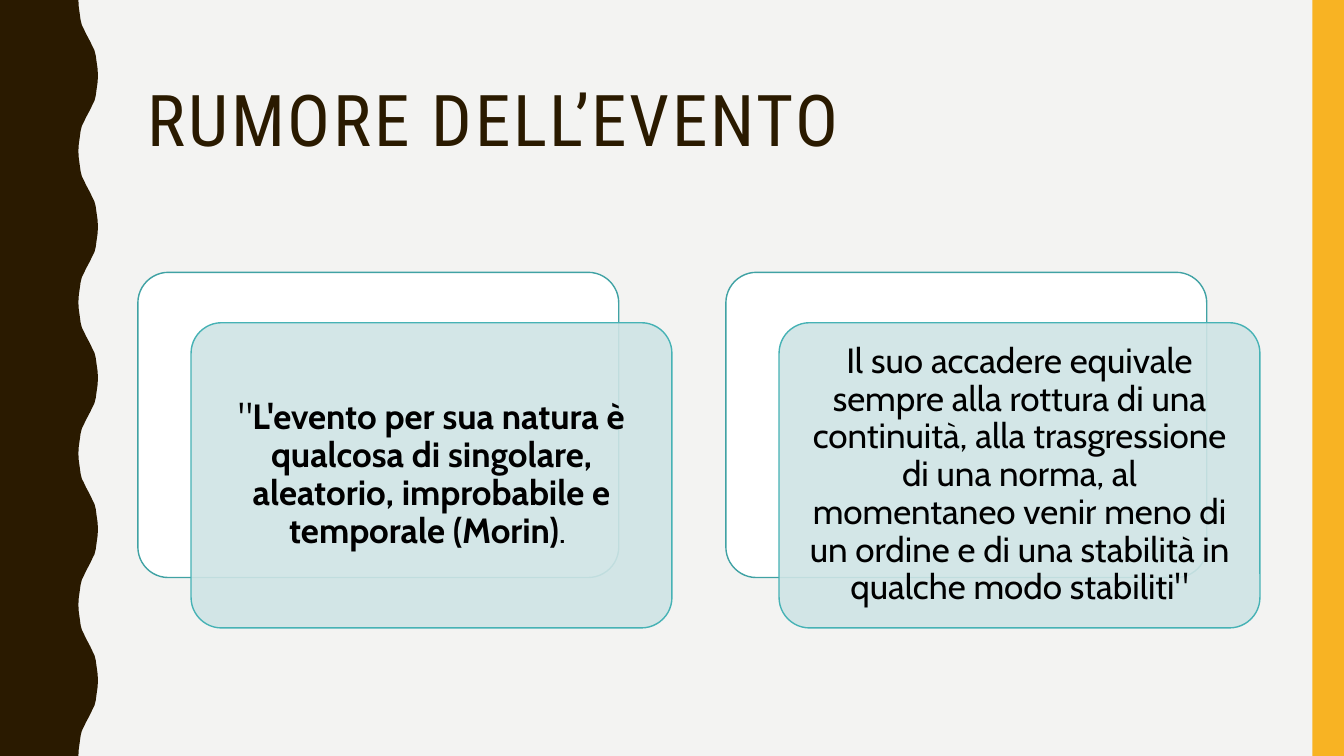
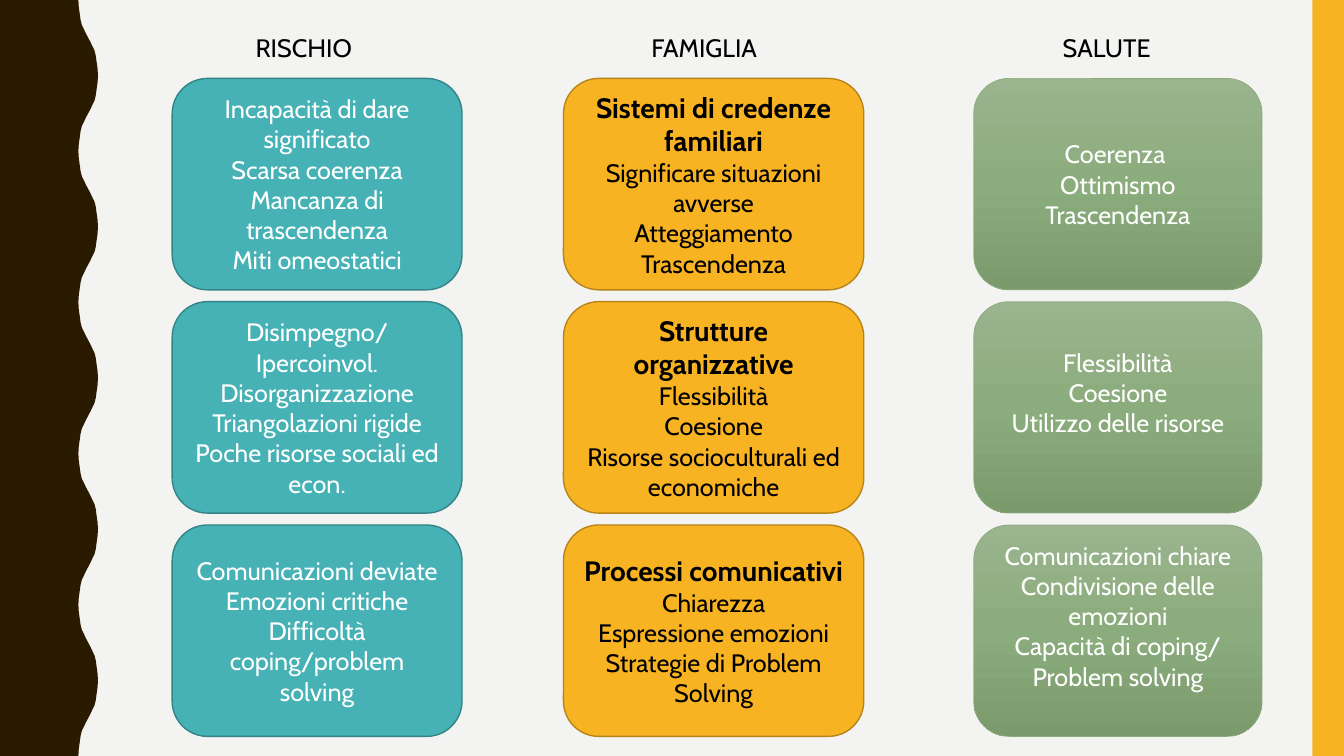
from copy import deepcopy

from pptx import Presentation
from pptx.dml.color import RGBColor
from pptx.enum.shapes import MSO_SHAPE as Shape
from pptx.enum.text import MSO_ANCHOR as Anchor, PP_ALIGN as Align
from pptx.oxml.ns import qn
from pptx.oxml.xmlchemy import OxmlElement
from pptx.util import Pt

BROWN = RGBColor(0x2A, 0x1A, 0x00)
GOLD = RGBColor(0xF8, 0xB3, 0x23)
OCHRE = RGBColor(0xB7, 0x84, 0x1A)
TEAL = RGBColor(0x46, 0xB2, 0xB5)
DEEP = RGBColor(0x34, 0x84, 0x86)
RIM = RGBColor(0x40, 0xA2, 0xA4)
PALE = RGBColor(0xCF, 0xE4, 0xE5)
PAPER = RGBColor(0xF3, 0xF3, 0xF2)
SAGE = RGBColor(0x8C, 0xAA, 0x7E)
GREENS = [(0, RGBColor(0x9A, 0xB4, 0x8E)),
          (0.5, RGBColor(0x8B, 0xAC, 0x7C)),
          (1, RGBColor(0x7B, 0x9B, 0x6C))]
BLACK = RGBColor(0, 0, 0)
WHITE = RGBColor(255, 255, 255)
BODY, HEAD = "Cabin", "Roboto Condensed"
WIDE, HIGH = 960, 540


def add_box(slide, kind, box, fill, line=None, width=1):
    """Add a flat shape; fill is a colour or a list of gradient stops."""
    shape = slide.shapes.add_shape(kind, *map(Pt, box))
    shape.shadow.inherit = False
    if isinstance(fill, list):
        shape.fill.gradient()
        shape.fill.gradient_angle = 270
        stops = shape.element.spPr.find(".//" + qn("a:gsLst"))
        stops.append(deepcopy(stops[0]))
        for stop, (pos, tint) in zip(shape.fill.gradient_stops, fill):
            stop.position = pos
            stop.color.rgb = tint
    else:
        shape.fill.solid()
        shape.fill.fore_color.rgb = fill
    if line is None:
        shape.line.fill.background()
    else:
        shape.line.color.rgb = line
        shape.line.width = Pt(width)
    return shape


def write(shape, paras, color, font=BODY, align=Align.CENTER, space=None):
    """Fill a shape with paragraphs, each a list of (text, size, bold) runs."""
    frame = shape.text_frame
    frame.word_wrap = True
    frame.vertical_anchor = Anchor.MIDDLE
    for i, runs in enumerate(paras):
        para = frame.add_paragraph() if i else frame.paragraphs[0]
        para.alignment = align
        para.line_spacing = space
        for text, size, bold in runs:
            run = para.add_run()
            run.text = text
            run.font.name = font
            run.font.size = Pt(size)
            run.font.bold = bold
            run.font.color.rgb = color
    return frame


prs = Presentation()
prs.slide_width, prs.slide_height = Pt(WIDE), Pt(HIGH)
master = prs.slide_master
master.background.fill.solid()
master.background.fill.fore_color.rgb = PAPER
event, family = [prs.slides.add_slide(prs.slide_layouts[6]) for _ in range(2)]

# Wavy edge: a quarter wave as (y, x), turned and mirrored into a full one
quarter = [(0, 56), (5, 56.3), (10, 57), (14.4, 57.6), (18, 58.5),
           (21, 60), (24, 61.4), (27, 63)]
half = quarter + [(54 - y, 126 - x) for y, x in quarter[-2::-1]]
wave = half + [(108 - y, x) for y, x in half[-2::-1]]
edge = [(x, top + y) for top in range(0, HIGH, 108) for y, x in wave]
path = event.shapes.build_freeform(0, 0, scale=1)
path.add_line_segments([(Pt(x), Pt(y)) for x, y in edge + [(0, HIGH)]])
side = path.convert_to_shape()
side.shadow.inherit = False
side.fill.solid()
side.fill.fore_color.rgb = BROWN
side.line.fill.background()
band = add_box(event, Shape.RECTANGLE, (937.5, 0, 22.5, HIGH), GOLD)

# Both bands belong to the master, so every slide shows them
for num, part in enumerate((side, band), 101):
    part.element.nvSpPr.cNvPr.set("id", str(num))
    master.shapes.element.append(part.element)

# Slide 1: title and two layered cards
title = event.shapes.add_textbox(Pt(98.5), Pt(30), Pt(801.5), Pt(117))
frame = write(title, [[("RUMORE DELL’EVENTO", 51, False)]], BROWN, HEAD,
              Align.LEFT, 0.9)
frame.paragraphs[0].runs[0].font._element.set("spc", "200")

quotes = [
    [('"', 25, False),
     ("L'evento per sua natura è qualcosa di singolare, aleatorio, "
      "improbabile e temporale (Morin)", 25, True),
     (". ", 25, False)],
    [("Il suo accadere equivale sempre alla rottura di una continuità, "
      "alla trasgressione di una norma, al momentaneo venir meno di un "
      'ordine e di una stabilità in qualche modo stabiliti"', 25, False)],
]
for i, quote in enumerate(quotes):
    left = 98.5 + 420 * i
    back = add_box(event, Shape.ROUNDED_RECTANGLE,
                   (left, 194.5, 343.5, 218), WHITE, RIM)
    card = add_box(event, Shape.ROUNDED_RECTANGLE,
                   (left + 38, 230.5, 343.5, 218), PALE, TEAL)
    back.adjustments[0] = card.adjustments[0] = 0.1
    alpha = OxmlElement("a:alpha")
    alpha.set("val", "90000")
    card.element.spPr.find(qn("a:solidFill"))[0].append(alpha)
    frame = write(card, [quote], BLACK, space=0.9)
    frame.margin_top = frame.margin_bottom = Pt(7.2)

# Slide 2: three columns of three cards; lift raises the text of a card
columns = [
    ("RISCHIO", 163, 123, 207, TEAL, DEEP, 1, WHITE, [
        (0, ["Incapacità di dare significato", "Scarsa coerenza",
             "Mancanza di trascendenza", "Miti omeostatici"]),
        (0, ["Disimpegno/Ipercoinvol.", "Disorganizzazione",
             "Triangolazioni rigide", "Poche risorse sociali ed econ."]),
        (0, ["Comunicazioni deviate", "Emozioni critiche",
             "Difficoltà coping/problem solving"]),
    ]),
    ("FAMIGLIA", 449, 402.5, 214.5, GOLD, OCHRE, 1, BLACK, [
        (0, ["Sistemi di credenze familiari",
             "Significare situazioni avverse", "Atteggiamento",
             "Trascendenza"]),
        (0, ["Strutture organizzative", "Flessibilità", "Coesione",
             "Risorse socioculturali ed economiche"]),
        (0, ["Processi comunicativi", "Chiarezza", "Espressione emozioni",
             "Strategie di Problem Solving"]),
    ]),
    ("SALUTE", 736.5, 695.5, 206, GREENS, SAGE, 0.5, WHITE, [
        (0, ["Coerenza ", "Ottimismo", "Trascendenza"]),
        (21.6, ["Flessibilità", "Coesione", "Utilizzo delle risorse"]),
        (21.6, ["Comunicazioni chiare", "Condivisione delle emozioni",
                "Capacità di coping/ Problem solving"]),
    ]),
]
for name, start, left, wide, fill, line, width, ink, cards in columns:
    label = family.shapes.add_textbox(Pt(start), Pt(19.5), Pt(108), Pt(29))
    write(label, [[(name, 18, False)]], BLACK)
    for row, (lift, lines) in enumerate(cards):
        card = add_box(family, Shape.ROUNDED_RECTANGLE,
                       (left, 56 + 159.5 * row, wide, 151),
                       fill, line, width)
        paras = [[(text, 18, False)] for text in lines]
        if name == "FAMIGLIA":
            paras[0] = [(lines[0], 20, True)]
        frame = write(card, paras, ink)
        frame.margin_bottom = Pt(3.6 + lift)

prs.save("out.pptx")
